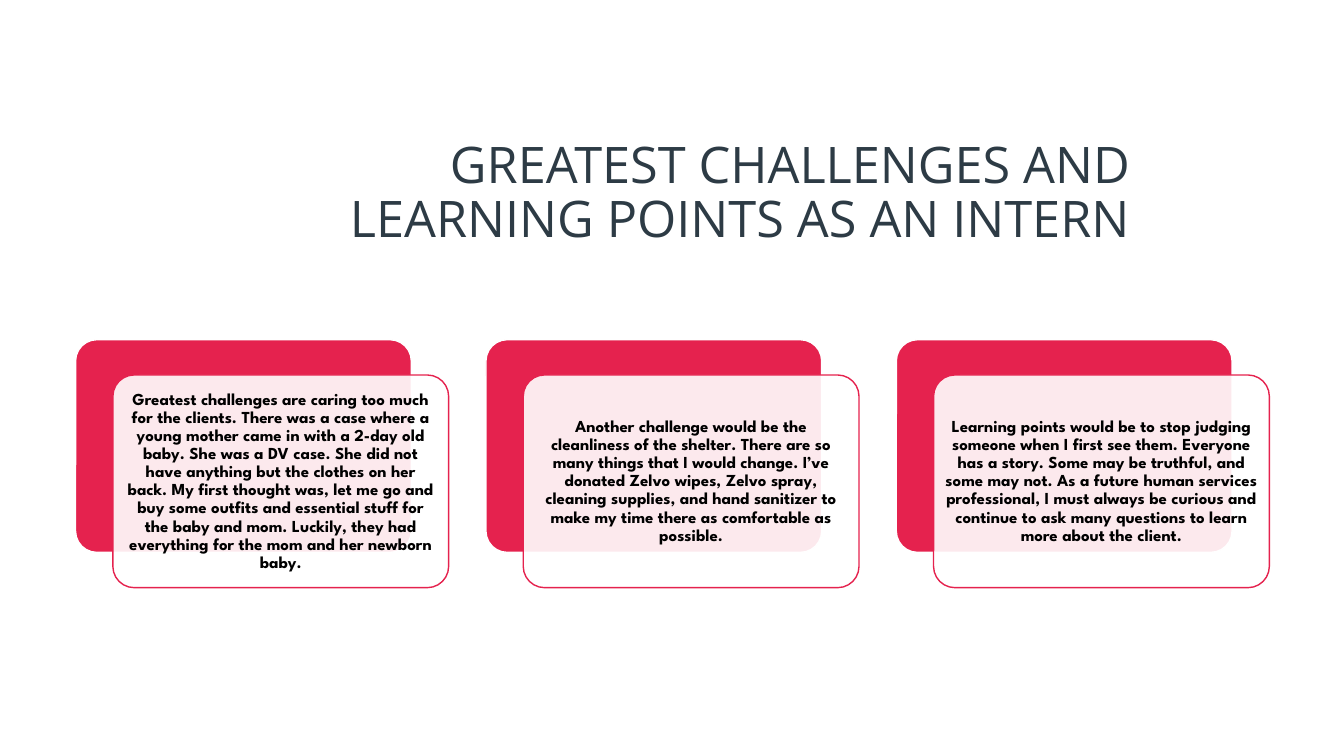
import pptx
import pptx.util
import pptx.dml.color
import pptx.enum.shapes
import pptx.enum.text
import pptx.oxml.ns
import lxml.etree

Inches = pptx.util.Inches
Pt = pptx.util.Pt
RGBColor = pptx.dml.color.RGBColor
ALIGN = pptx.enum.text.PP_ALIGN
MIDDLE = pptx.enum.text.MSO_ANCHOR.MIDDLE

CRIMSON = RGBColor(0xE5, 0x22, 0x4E)
WHITE = RGBColor(0xFF, 0xFF, 0xFF)
BLACK = RGBColor(0x00, 0x00, 0x00)
SLATE = RGBColor(0x2D, 0x3B, 0x45)

REFLECTIONS = [
    "Greatest challenges are caring too much for the clients. There was a case "
    "where a young mother came in with a 2-day old baby. She was a DV case. She "
    "did not have anything but the clothes on her back. My first thought was, "
    "let me go and buy some outfits and essential stuff for the baby and mom. "
    "Luckily, they had everything for the mom and her newborn baby.",
    "Another challenge would be the cleanliness of the shelter. There are so "
    "many things that I would change. I’ve donated Zelvo wipes, Zelvo spray, "
    "cleaning supplies, and hand sanitizer to make my time there as comfortable "
    "as possible.",
    "Learning points would be to stop judging someone when I first see them. "
    "Everyone has a story. Some may be truthful, and some may not. As a future "
    "human services professional, I must always be curious and continue to ask "
    "many questions to learn more about the client.",
]

deck = pptx.Presentation()
deck.slide_width = Inches(13.33)
deck.slide_height = Inches(7.5)
slide = deck.slides.add_slide(deck.slide_layouts[5])


def write(frame, text, align, font_name, size, color, bold):
    """Fill a text frame with one formatted paragraph."""
    frame.word_wrap = True
    frame.auto_size = pptx.enum.text.MSO_AUTO_SIZE.NONE
    frame.vertical_anchor = MIDDLE
    paragraph = frame.paragraphs[0]
    paragraph.alignment = align
    paragraph.line_spacing = 0.9
    run = paragraph.add_run()
    run.text = text
    run.font.name = font_name
    run.font.size = Pt(size)
    run.font.color.rgb = color
    run.font.bold = bold


def add_panel(left, top, fill, outline):
    """Add one rounded panel of the shared card size."""
    panel = slide.shapes.add_shape(
        pptx.enum.shapes.MSO_SHAPE.ROUNDED_RECTANGLE,
        Inches(left), Inches(top), Inches(3.33), Inches(2.11))
    panel.adjustments[0] = 0.1
    panel.shadow.inherit = False
    panel.fill.solid()
    panel.fill.fore_color.rgb = fill
    panel.line.color.rgb = outline
    panel.line.width = Pt(1)
    return panel


# Title, held in the upper part of its box by the bottom margin
heading = slide.shapes.title
heading.left, heading.top = Inches(3.05), Inches(1.49)
heading.width, heading.height = Inches(8.26), Inches(1.41)
heading.text_frame.margin_bottom = Inches(0.59)
write(heading.text_frame, "GREATEST CHALLENGES AND LEARNING POINTS\u00a0AS AN INTERN",
      ALIGN.RIGHT, "Open Sans", 36, SLATE, False)

# Three cards: a crimson backing with a translucent text panel over it
for column, reflection in enumerate(REFLECTIONS):
    left = 0.75 + column * 4.07
    add_panel(left, 3.37, CRIMSON, WHITE)
    card = add_panel(left + 0.37, 3.72, WHITE, CRIMSON)

    # 90 % opacity for the front panel
    fill_color = card.fill._xPr.find(pptx.oxml.ns.qn("a:solidFill"))[0]
    lxml.etree.SubElement(fill_color, pptx.oxml.ns.qn("a:alpha"), val="90000")

    frame = card.text_frame
    frame.margin_left = frame.margin_right = Inches(0.05)
    frame.margin_top = frame.margin_bottom = Inches(0.05)
    write(frame, reflection, ALIGN.CENTER, "League Spartan", 12, BLACK, True)

deck.save("out.pptx")
